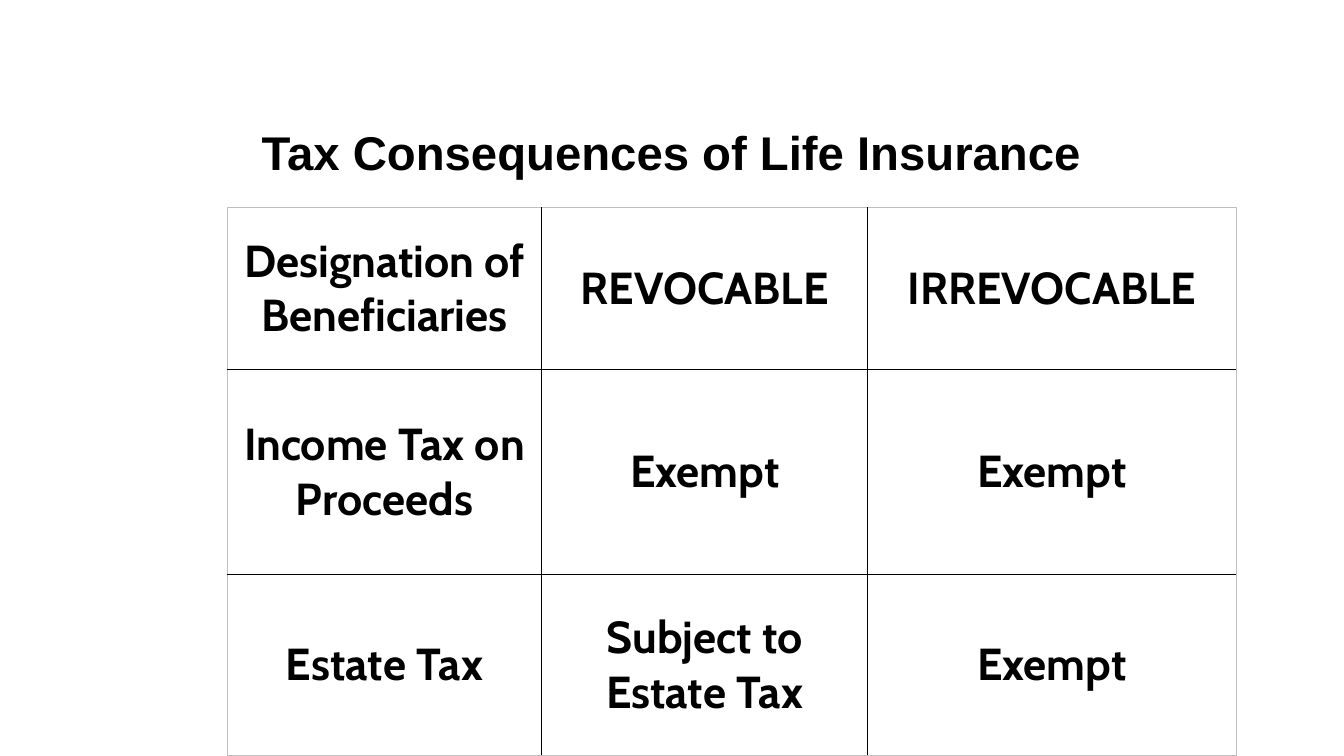
from lxml import etree
from pptx import Presentation
from pptx.dml.color import RGBColor
from pptx.enum.text import MSO_ANCHOR, PP_ALIGN
from pptx.oxml.ns import qn
from pptx.util import Pt

CENTER = PP_ALIGN.CENTER
MIDDLE = MSO_ANCHOR.MIDDLE
BLACK = RGBColor(0, 0, 0)
WHITE = RGBColor(255, 255, 255)
GRAY = RGBColor(0xBF, 0xBF, 0xBF)

COLUMN_WIDTHS = [224.6, 232.9, 262.9]
ROW_HEIGHTS = [115.7, 146.4, 129.3]
TAX_ROWS = [
    ["Designation of Beneficiaries", "REVOCABLE", "IRREVOCABLE"],
    ["Income Tax on Proceeds", "Exempt", "Exempt"],
    ["Estate Tax", "Subject to Estate Tax", "Exempt"],
]


def style_paragraph(para, font_name, size):
    """Centre a paragraph and set it in bold black."""
    para.alignment = CENTER
    para.font.name = font_name
    para.font.size = Pt(size)
    para.font.bold = True
    para.font.color.rgb = BLACK


def add_title(page, left, top, width, height):
    """Place the slide heading in the given box."""
    box = page.shapes.add_textbox(Pt(left), Pt(top), Pt(width), Pt(height))
    frame = box.text_frame
    frame.word_wrap = True
    frame.vertical_anchor = MIDDLE
    para = frame.paragraphs[0]
    para.text = "Tax Consequences of Life Insurance"
    style_paragraph(para, "Arial", 33.8)


def add_border(cell, side, color, width):
    """Draw one side of a table cell."""
    properties = cell._tc.get_or_add_tcPr()
    line = etree.SubElement(properties, qn(f"a:ln{side}"), w=str(Pt(width)))
    fill = etree.SubElement(line, qn("a:solidFill"))
    etree.SubElement(fill, qn("a:srgbClr"), val=str(color))


def style_cell(cell, outer_sides):
    """Set the margins, borders, fill and text style of a cell."""
    cell.margin_left = cell.margin_right = Pt(4.5)
    cell.margin_top = cell.margin_bottom = Pt(2.25)
    cell.vertical_anchor = MIDDLE
    for side, is_outer in outer_sides.items():
        color, width = (GRAY, 0.5) if is_outer else (BLACK, 1)
        add_border(cell, side, color, width)
    cell.fill.solid()
    cell.fill.fore_color.rgb = WHITE
    style_paragraph(cell.text_frame.paragraphs[0], "Cabin", 32)


def add_tax_table(page, left, top):
    """Place the tax table with its top left corner at the given point."""
    row_count, column_count = len(ROW_HEIGHTS), len(COLUMN_WIDTHS)
    table = page.shapes.add_table(
        row_count, column_count, Pt(left), Pt(top),
        Pt(sum(COLUMN_WIDTHS)), Pt(sum(ROW_HEIGHTS)),
    ).table
    table.first_row = table.horz_banding = False
    for column, width in zip(table.columns, COLUMN_WIDTHS):
        column.width = Pt(width)
    for row, height in zip(table.rows, ROW_HEIGHTS):
        row.height = Pt(height)
    for row_index, texts in enumerate(TAX_ROWS):
        for column_index, text in enumerate(texts):
            cell = table.cell(row_index, column_index)
            cell.text = text
            style_cell(cell, {
                "L": column_index == 0,
                "R": column_index == column_count - 1,
                "T": row_index == 0,
                "B": row_index == row_count - 1,
            })


def main():
    """Build the slide and save it."""
    deck = Presentation()
    deck.slide_width, deck.slide_height = Pt(960), Pt(540)
    page = deck.slides.add_slide(deck.slide_layouts[6])
    add_title(page, 120, 68, 720, 80.5)
    add_tax_table(page, 162.4, 148.2)
    deck.save("out.pptx")


if __name__ == "__main__":
    main()
